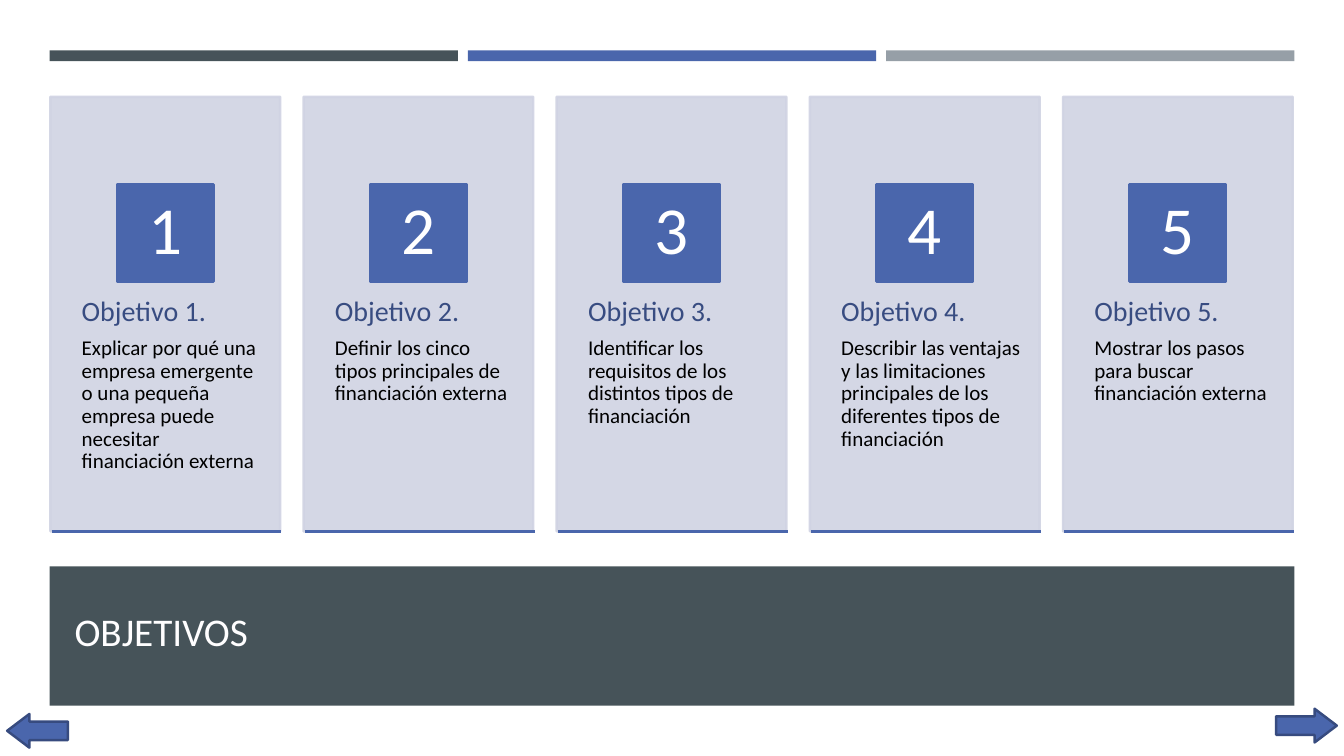
from dataclasses import dataclass

from lxml import etree
from pptx import Presentation
from pptx import util as u
from pptx.dml.color import RGBColor
from pptx.enum import shapes, text
from pptx.oxml import ns
from pptx.util import Cm


@dataclass(frozen=True)
class Theme:
    font: str = "Calibri"
    white: str = "FFFFFF"
    title_text: str = "FFFEFF"
    black: str = "000000"
    slate: str = "465359"
    blue: str = "4A66AC"
    grey: str = "969FA7"
    card: str = "D0D3E3"
    heading: str = "384C81"
    arrow_edge: str = "374B7F"
    title_size: int = 28
    number_size: int = 48
    heading_size: int = 20
    body_size: int = 15
    line_width: float = 1.75


THEME = Theme()
OBJECTIVES = [
    "Explicar por qué una empresa emergente o una pequeña empresa puede necesitar financiación externa",
    "Definir los cinco tipos principales de financiación externa",
    "Identificar los requisitos de los distintos tipos de financiación",
    "Describir las ventajas y las limitaciones principales de los diferentes tipos de financiación",
    "Mostrar los pasos para buscar financiación externa",
]


def set_opacity(fill_parent, percent):
    """Make the solid fill found under an XML element partly transparent."""
    color = fill_parent.find(ns.qn("a:solidFill"))[0]
    etree.SubElement(color, ns.qn("a:alpha"), val=str(percent * 1000))


def add_block(slide, box, fill, edge=None, kind=shapes.MSO_SHAPE.RECTANGLE):
    shape = slide.shapes.add_shape(kind, *map(Cm, box))
    shape.shadow.inherit = False
    shape.fill.solid()
    shape.fill.fore_color.rgb = RGBColor.from_string(fill)
    if edge:
        shape.line.color.rgb = RGBColor.from_string(edge)
        shape.line.width = u.Pt(THEME.line_width)
    else:
        shape.line.fill.background()
    return shape


def add_rule(slide, left, top, width):
    rule = slide.shapes.add_connector(
        shapes.MSO_CONNECTOR.STRAIGHT, Cm(left), Cm(top), Cm(left + width), Cm(top)
    )
    rule.line.color.rgb = RGBColor.from_string(THEME.blue)
    rule.line.width = u.Pt(THEME.line_width)
    etree.SubElement(rule._element.spPr, ns.qn("a:effectLst"))


def set_frame(shape, margins, anchor):
    """Set wrapping, anchor and margins (left, top, right, bottom)."""
    frame = shape.text_frame
    frame.word_wrap = True
    frame.vertical_anchor = anchor
    frame.margin_left, frame.margin_top, frame.margin_right, frame.margin_bottom = map(Cm, margins)
    return frame


def write(paragraph, words, size, color, align=text.PP_ALIGN.LEFT, space_after=0):
    paragraph.alignment = align
    paragraph.line_spacing = 0.9
    paragraph.space_after = u.Pt(space_after)
    run = paragraph.add_run()
    run.text = words
    run.font.name = THEME.font
    run.font.size = u.Pt(size)
    run.font.color.rgb = RGBColor.from_string(color)


def add_card(slide, number, objective):
    width, top, height = 5.79, 2.44, 10.95
    left = 1.27 + (number - 1) * 6.38
    badge_size = 2.44

    card = add_block(slide, (left, top, width, height), THEME.card, THEME.card)
    set_opacity(card._element.spPr, 90)
    set_opacity(card.line._get_or_add_ln(), 90)

    box = slide.shapes.add_textbox(Cm(left), Cm(6.58), Cm(width), Cm(6.55))
    frame = set_frame(box, (0.79, 0.91, 0.46, 0.91), text.MSO_ANCHOR.TOP)
    write(frame.paragraphs[0], f"Objetivo {number}.", THEME.heading_size, THEME.heading, space_after=7)
    write(frame.add_paragraph(), objective, THEME.body_size, THEME.black)

    badge_left = left + (width - badge_size) / 2
    badge = add_block(slide, (badge_left, 4.65, badge_size, badge_size), THEME.blue, THEME.blue)
    frame = set_frame(badge, (0.18, 0.03, 0.18, 0.03), text.MSO_ANCHOR.MIDDLE)
    write(frame.paragraphs[0], str(number), THEME.number_size, THEME.white, text.PP_ALIGN.CENTER)

    add_rule(slide, left + 0.03, top + height, width)


def add_title(slide, words):
    add_block(slide, (1.25, 14.27, 31.37, 3.51), THEME.slate)
    box = slide.shapes.add_textbox(Cm(1.63), Cm(14.63), Cm(30.63), Cm(2.67))
    frame = set_frame(box, (0.25, 0.13, 0.25, 0.13), text.MSO_ANCHOR.MIDDLE)
    write(frame.paragraphs[0], words, THEME.title_size, THEME.title_text)


def add_arrow(slide, left, top, rotation=0):
    arrow = add_block(
        slide, (left, top, 1.53, 0.85), THEME.blue, THEME.arrow_edge, shapes.MSO_SHAPE.RIGHT_ARROW
    )
    arrow.adjustments[0] = 0.55
    arrow.adjustments[1] = 0.66
    arrow.rotation = rotation


def main():
    presentation = Presentation()
    presentation.slide_width, presentation.slide_height = Cm(33.87), Cm(19.05)
    slide = presentation.slides.add_slide(presentation.slide_layouts[6])
    slide.background.fill.solid()
    slide.background.fill.fore_color.rgb = RGBColor.from_string(THEME.white)

    add_title(slide, "OBJETIVOS")
    for index, color in enumerate((THEME.slate, THEME.blue, THEME.grey)):
        add_block(slide, (1.25 + index * 10.54, 1.27, 10.29, 0.27), color)
    for number, objective in enumerate(OBJECTIVES, start=1):
        add_card(slide, number, objective)
    add_arrow(slide, 32.16, 17.86)
    add_arrow(slide, 0.18, 17.99, rotation=180)

    presentation.save("out.pptx")


if __name__ == "__main__":
    main()
